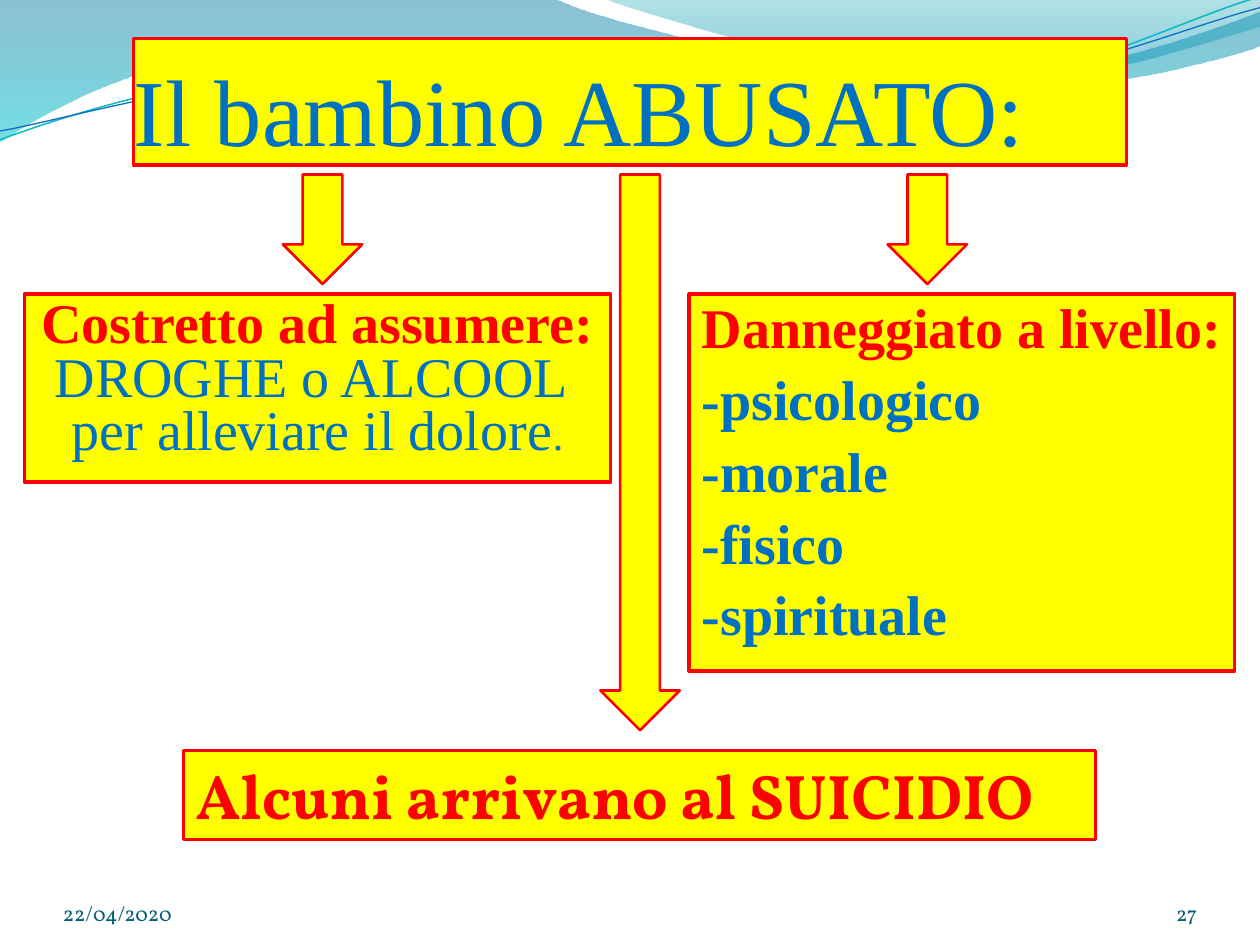
import pptx
import pptx.dml.color
import pptx.enum.shapes
import pptx.enum.text
import pptx.oxml.ns
import pptx.util
from lxml import etree

RGBColor = pptx.dml.color.RGBColor
YELLOW = RGBColor(0xFF, 0xFF, 0x00)
RED = RGBColor(0xFF, 0x00, 0x00)
BLUE = RGBColor(0x00, 0x70, 0xC0)
FOOTER_BLUE = RGBColor(0x04, 0x5D, 0x75)
WAVE_BLUE = RGBColor(0x00, 0x74, 0xA1)
WAVE_CYAN = RGBColor(0x00, 0xC6, 0xCF)
CREST_TEAL = RGBColor(0x00, 0xA1, 0xA9)
CREST_BLUE = RGBColor(0x00, 0x8B, 0xBF)
LINE_TEAL = RGBColor(0x0A, 0xB8, 0xBF)
LINE_BLUE = RGBColor(0x0F, 0x6F, 0xC6)

SERIF = "Times New Roman"
DISPLAY = "Vollkorn"
Pt = pptx.util.Pt
Align = pptx.enum.text.PP_ALIGN
Anchor = pptx.enum.text.MSO_ANCHOR
Preset = pptx.enum.shapes.MSO_SHAPE
qn = pptx.oxml.ns.qn

deck = pptx.Presentation()
deck.slide_width = pptx.util.Inches(10)
deck.slide_height = pptx.util.Inches(7.5)
slide = deck.slides.add_slide(deck.slide_layouts[6])
COLUMN = deck.slide_width / 100
ROW = deck.slide_height / 75


def add_wave(start, pieces, closed):
    """Draw a freeform; a piece is one line end, or two controls and a curve end."""
    builder = slide.shapes.build_freeform(start[0] * COLUMN, start[1] * ROW)
    builder.add_line_segments([(x * COLUMN, y * ROW) for piece in pieces for x, y in piece],
                              close=closed)
    wave = builder.convert_to_shape()
    wave.shadow.inherit = False
    segments = iter(list(wave._element.iter(qn("a:lnTo"))))
    for piece in pieces:
        group = [next(segments) for _ in piece]
        if len(group) == 3:
            curve = etree.Element(qn("a:cubicBezTo"))
            group[0].addprevious(curve)
            for segment in group:
                curve.append(segment[0])
                segment.getparent().remove(segment)
    return wave


def add_yellow(preset, left, top, width, height, line_width):
    """Add a yellow shape with a red outline, placed in columns and rows."""
    shape = slide.shapes.add_shape(preset, round(left * COLUMN), round(top * ROW),
                                   round(width * COLUMN), round(height * ROW))
    shape.shadow.inherit = False
    shape.fill.solid()
    shape.fill.fore_color.rgb = YELLOW
    shape.line.color.rgb = RED
    shape.line.width = Pt(line_width)
    return shape


# Translucent waves along the top: outline, then (position, colour, opacity %) stops
waves = [
    ((0, 0), [
        [(44, -0.1)],
        [(47.6, 1.7), (66.4, 6.3), (75.8, 6.3)],
        [(85.3, 6.3), (95.8, 2.6), (100, 0.9)],
        [(100.1, 3.6)],
        [(98.3, 4.4), (87, 7.6), (74.6, 7.5)],
        [(62.2, 7.5), (38.2, 2.8), (25.7, 3.4)],
        [(12.9, 3.6), (4.6, 8.3), (-0.1, 11.3)],
        [(0, 0)],
    ], [(0, WAVE_BLUE, 45), (1, WAVE_CYAN, 55)]),
    ((47.9, -0.1), [
        [(50.9, 1.1), (68.2, 6.2), (76.9, 6.5)],
        [(85.6, 6.9), (96.1, 3.2), (100, 2.1)],
        [(100, 0)],
        [(47.9, -0.1)],
    ], [(0, CREST_TEAL, 30), (0.8, CREST_BLUE, 45)]),
]
for start, pieces, stops in waves:
    wave = add_wave(start, pieces, True)
    wave.line.fill.background()
    wave.fill.gradient()
    wave.fill.gradient_angle = 270
    for stop, (position, color, _) in zip(wave.fill.gradient_stops, stops):
        stop.position = position
        stop.color.rgb = color
    for tint, (_, _, opacity) in zip(wave._element.spPr.iter(qn("a:srgbClr")), stops):
        etree.SubElement(tint, qn("a:alpha"), val=str(opacity * 1000))

# Thin lines that follow the waves, tilted together
strands = [
    ((-0.2, 8.74), [
        [(4.68, 7.18), (15.84, 4.09), (27.75, 4.15)],
        [(39.56, 4.21), (59.14, 9.34), (71.17, 9.01)],
        [(83.2, 8.67), (93.95, 3.57), (100.03, 2.16)],
    ], LINE_TEAL, 0.85),
    ((-0.16, 8.04), [
        [(4.58, 7.47), (16.43, 4.52), (28.34, 4.58)],
        [(40.35, 4.65), (59.57, 8.86), (71.6, 8.52)],
        [(83.53, 8.28), (94.23, 4.18), (100.2, 2.97)],
    ], LINE_BLUE, 0.75),
]
for start, pieces, color, line_width in strands:
    strand = add_wave(start, pieces, False)
    strand.rotation = 357.3
    strand.fill.background()
    strand.line.color.rgb = color
    strand.line.width = Pt(line_width)

# Panels: place, font, size, bold, alignment, line spacing, space before %, paragraphs
damages = ["-psicologico", "-morale", "-fisico", "-spirituale"]
panels = [
    ((10.6, 3.05, 78.8, 10.05), SERIF, 54, False, Align.LEFT, 1, 0,
     [[("Il bambino ABUSATO:", BLUE)]]),
    ((1.95, 23.35, 46.5, 14.9), SERIF, 32, None, Align.CENTER, 0.8, 20,
     [[("Costretto ad assumere: ", RED),
       ("DROGHE o ALCOOL  per alleviare il dolore", BLUE), (".", BLUE)]]),
    ((54.7, 23.35, 43.3, 29.9), SERIF, 32, True, Align.LEFT, 0.9, 20,
     [[("Danneggiato a livello:", RED)]] + [[(damage, BLUE)] for damage in damages]),
    ((14.55, 59.55, 72.4, 7.1), DISPLAY, 36, True, Align.LEFT, 1, 50,
     [[("Alcuni arrivano al SUICIDIO", RED)]]),
]
for place, font, size, bold, align, spacing, before, paragraphs in panels:
    panel = add_yellow(Preset.RECTANGLE, *place, 2)
    frame = panel.text_frame
    frame.word_wrap = True
    frame.vertical_anchor = Anchor.TOP
    if size == 54:
        frame.vertical_anchor = Anchor.BOTTOM
        frame.margin_left = frame.margin_right = frame.margin_bottom = 0
    for index, pieces in enumerate(paragraphs):
        paragraph = frame.add_paragraph() if index else frame.paragraphs[0]
        paragraph.alignment = align
        paragraph.line_spacing = spacing
        paragraph.space_before = Pt(0)
        gap = paragraph._p.pPr.find(qn("a:spcBef"))
        gap.clear()
        etree.SubElement(gap, qn("a:spcPct"), val=str(before * 1000))
        if len(paragraphs) > 1:
            hang = round(3 * COLUMN)
            paragraph._p.pPr.set("marL", str(hang))
            paragraph._p.pPr.set("indent", str(-hang))
        paragraph.font.name = font
        paragraph.font.size = Pt(size)
        paragraph.font.bold = bold
        for text, color in pieces:
            run = paragraph.add_run()
            run.text = text
            run.font.color.rgb = color
            if bold is None:
                run.font.bold = color == RED
            if text == ".":
                run.font.size = Pt(24)

# Date and slide number
footers = [("22/04/2020", 5, 23.3, Align.LEFT), ("27", 86.7, 8.3, Align.RIGHT)]
for text, left, width, align in footers:
    footer = slide.shapes.add_textbox(round(left * COLUMN), round(69.5 * ROW),
                                      round(width * COLUMN), round(4 * ROW))
    frame = footer.text_frame
    frame.word_wrap = True
    frame.vertical_anchor = Anchor.BOTTOM
    frame.margin_left = frame.margin_right = frame.margin_top = frame.margin_bottom = 0
    paragraph = frame.paragraphs[0]
    paragraph.text = text
    paragraph.alignment = align
    paragraph.font.name = DISPLAY
    paragraph.font.size = Pt(12)
    paragraph.font.color.rgb = FOOTER_BLUE

# Arrows from the title down to each panel
for left, height in [(22.45, 8.7), (70.45, 8.7), (47.65, 44.1)]:
    add_yellow(Preset.DOWN_ARROW, left, 13.85, 6.3, height, 1.5)

deck.save("out.pptx")
